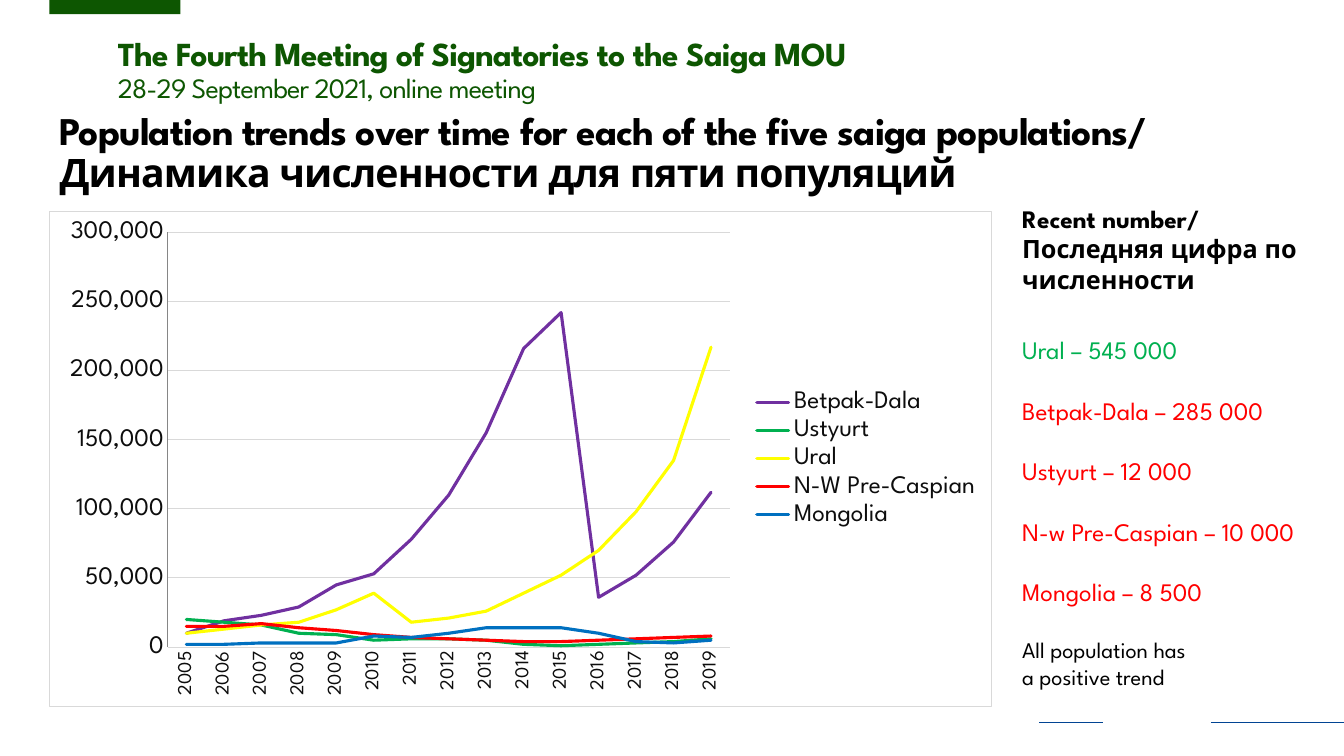
from lxml import etree
from pptx import Presentation
from pptx.chart.data import CategoryChartData
from pptx.dml.color import RGBColor
from pptx.enum.chart import XL_CHART_TYPE, XL_LEGEND_POSITION, XL_TICK_MARK
from pptx.enum.shapes import MSO_CONNECTOR, MSO_SHAPE
from pptx.enum.text import MSO_ANCHOR, MSO_AUTO_SIZE, PP_ALIGN
from pptx.oxml.ns import qn
from pptx.util import Inches, Pt

LINE_CHART = XL_CHART_TYPE.LINE
LEGEND_RIGHT = XL_LEGEND_POSITION.RIGHT
NO_TICK = XL_TICK_MARK.NONE
STRAIGHT, RECTANGLE = MSO_CONNECTOR.STRAIGHT, MSO_SHAPE.RECTANGLE
MIDDLE, TOP, LEFT = MSO_ANCHOR.MIDDLE, MSO_ANCHOR.TOP, PP_ALIGN.LEFT
FIXED = MSO_AUTO_SIZE.NONE

WIDTH, HEIGHT = Inches(13.33), Inches(7.5)
FONT = "League Spartan"
GREEN, BLACK, GREY, INK = "0D5601", "000000", "D9D9D9", "0D0D0D"
RISING, RED, BLUE = "00B050", "FF0000", "014493"

YEARS = [str(year) for year in range(2005, 2020)]
THOUSANDS = {
    "Betpak-Dala": ("7030A0", [10, 19, 23, 29, 45, 53, 78, 110, 155, 216, 242, 36, 52, 76, 112]),
    "Ustyurt": ("00B050", [20, 18, 16, 10, 9, 5, 6, 6, 5, 2, 1, 2, 3, 4, 6]),
    "Ural": ("FFFF00", [10, 13, 16, 18, 27, 39, 18, 21, 26, 39, 52, 70, 98, 135, 217]),
    "N-W Pre-Caspian": ("FF0000", [15, 15, 17, 14, 12, 9, 7, 6, 5, 4, 4, 5, 6, 7, 8]),
    "Mongolia": ("0070C0", [2, 2, 3, 3, 3, 8, 7, 10, 14, 14, 14, 10, 4, 3, 5]),
}
RECENT = [
    ("Ural – 545 000", RISING),
    ("Betpak-Dala – 285 000", RED),
    ("Ustyurt – 12 000", RED),
    ("N-w Pre-Caspian – 10 000", RED),
    ("Mongolia – 8 500", RED),
]
PLOT_SHARES = {"x": 0.125, "y": 0.043, "w": 0.597, "h": 0.838}


def color(text):
    """Turn a hex string into a colour."""
    return RGBColor.from_string(text)


def area(left, top, width, height):
    """Turn percentages of the slide into lengths."""
    return (round(WIDTH * left / 100), round(HEIGHT * top / 100),
            round(WIDTH * width / 100), round(HEIGHT * height / 100))


def style_font(font, size, hue, bold=False):
    """Format a font."""
    for name, value in {"name": FONT, "size": Pt(size), "bold": bold}.items():
        setattr(font, name, value)
    font.color.rgb = color(hue)


def style_line(line, hue, width):
    """Format an outline."""
    line.color.rgb = color(hue)
    line.width = Pt(width)


def fill_text(frame, rows, anchor=TOP, tracking=0):
    """Write rows of text, size, colour, weight and paragraph settings."""
    for name, value in {"word_wrap": True, "auto_size": FIXED, "vertical_anchor": anchor}.items():
        setattr(frame, name, value)
    for index, (text, size, hue, bold, settings) in enumerate(rows):
        para = frame.add_paragraph() if index else frame.paragraphs[0]
        for name, value in {"alignment": LEFT, **settings}.items():
            setattr(para, name, value)
        for number, part in enumerate(text.split("\n")):
            if number:
                para.add_line_break()
            span = para.add_run()
            span.text = part
            style_font(span.font, size, hue, bold)
            if tracking:
                span.font._element.set("spc", str(tracking))


def add_text(page, box, rows, **options):
    """Place a text box."""
    fill_text(page.shapes.add_textbox(*box).text_frame, rows, **options)


def draw_frame(page):
    """Draw the footer rules and the top tab."""
    for start, end in ((90.1, 100), (77.34, 82.07)):
        left, top, width, _ = area(start, 95.6, end - start, 0)
        rule = page.shapes.add_connector(STRAIGHT, left, top, left + width, top)
        style_line(rule.line, BLUE, 1)
        etree.SubElement(rule._element.spPr, qn("a:effectLst"))
    tab = page.shapes.add_shape(RECTANGLE, *area(3.68, 0, 9.75, 1.87))
    tab.shadow.inherit = False
    tab.fill.solid()
    tab.fill.fore_color.rgb = color(GREEN)
    tab.line.fill.background()


def write_header(page, box):
    """Write the meeting name and date."""
    tight = {"line_spacing": 0.9}
    add_text(page, box, [
        ("The Fourth Meeting of Signatories to the Saiga MOU", 24, GREEN, True, tight),
        ("28-29 September 2021, online meeting", 20, GREEN, False, tight),
    ], anchor=MIDDLE, tracking=-60)


def write_title(page, box):
    """Place and fill the title."""
    title = page.shapes.title
    title.left, title.top, title.width, title.height = box
    text = ("Population trends over time for each of the five saiga populations/\n"
            "Динамика численности для пяти популяций")
    fill_text(title.text_frame, [(text, 28, BLACK, True, {"line_spacing": 0.9, "space_before": Pt(0)})],
              anchor=MIDDLE, tracking=-60)


def fix_plot(chart):
    """Set the inner plot area as shares of the chart."""
    plot_area = chart._chartSpace.chart.plotArea
    for old in plot_area.findall(qn("c:layout")):
        plot_area.remove(old)
    layout = etree.Element(qn("c:layout"))
    plot_area.insert(0, layout)
    manual = etree.SubElement(layout, qn("c:manualLayout"))
    settings = {"layoutTarget": "inner", "xMode": "edge", "yMode": "edge", **PLOT_SHARES}
    for name, value in settings.items():
        etree.SubElement(manual, qn("c:" + name)).set("val", str(value))


def frame_chart(chart):
    """Give the chart a white ground and a grey border."""
    properties = etree.Element(qn("c:spPr"))
    border = etree.Element(qn("a:ln"), w=str(Pt(0.75)))
    for parent, hue in ((properties, "FFFFFF"), (border, GREY)):
        solid = etree.SubElement(parent, qn("a:solidFill"))
        etree.SubElement(solid, qn("a:srgbClr"), val=hue)
    properties.append(border)
    chart._chartSpace.chart.addnext(properties)


def draw_chart(page, box):
    """Draw the population line chart."""
    data = CategoryChartData(number_format="#,##0")
    data.categories = YEARS
    for name, (_, values) in THOUSANDS.items():
        data.add_series(name, [value * 1000 for value in values])
    chart = page.shapes.add_chart(LINE_CHART, *box, data).chart
    style_font(chart.font, 10, BLACK)
    chart.has_title = False
    chart.has_legend = True
    chart.legend.position = LEGEND_RIGHT
    chart.legend.include_in_layout = False
    style_font(chart.legend.font, 18, INK)
    years, counts = chart.category_axis, chart.value_axis
    for axis, size, hue in ((years, 14, GREY), (counts, 18, "868686")):
        axis.major_tick_mark = axis.minor_tick_mark = NO_TICK
        style_font(axis.tick_labels.font, size, INK)
        style_line(axis.format.line, hue, 0.75)
    years._element.find(qn("c:txPr")).find(qn("a:bodyPr")).set("rot", "-5400000")
    for name, value in {"minimum_scale": 0, "maximum_scale": 300000, "major_unit": 50000}.items():
        setattr(counts, name, value)
    counts.tick_labels.number_format = "#,##0"
    counts.tick_labels.number_format_is_linked = False
    style_line(counts.major_gridlines.format.line, GREY, 0.75)
    chart.plots[0].vary_by_categories = False
    for series, (hue, _) in zip(chart.plots[0].series, THOUSANDS.values()):
        series.smooth = False
        style_line(series.format.line, hue, 2.25)
        series.format.line._ln.set("cap", "rnd")
    fix_plot(chart)
    frame_chart(chart)


def write_recent(page, heading_box, list_box):
    """Write the recent numbers beside the chart."""
    rows = [(text, 18, hue, False, {"line_spacing": 2.0}) for text, hue in RECENT]
    rows += [("All population has", 16, BLACK, False, {"space_before": Pt(21)}),
             ("a positive trend", 16, BLACK, False, {})]
    add_text(page, list_box, rows)
    heading = ("Recent number/", "Последняя цифра по", "численности")
    add_text(page, heading_box, [(text, 18, BLACK, True, {}) for text in heading])


def main():
    """Build the slide."""
    deck = Presentation()
    deck.slide_width, deck.slide_height = WIDTH, HEIGHT
    page = deck.slides.add_slide(deck.slide_layouts[5])
    draw_frame(page)
    write_header(page, area(8.03, 4.27, 91.67, 10.27))
    write_title(page, area(3.68, 16, 91.67, 8.67))
    draw_chart(page, area(3.68, 27.87, 70.14, 65.6))
    write_recent(page, area(75.32, 26.27, 22.5, 13.47), area(75.32, 39.6, 24.68, 56.93))
    deck.save("out.pptx")


if __name__ == "__main__":
    main()
